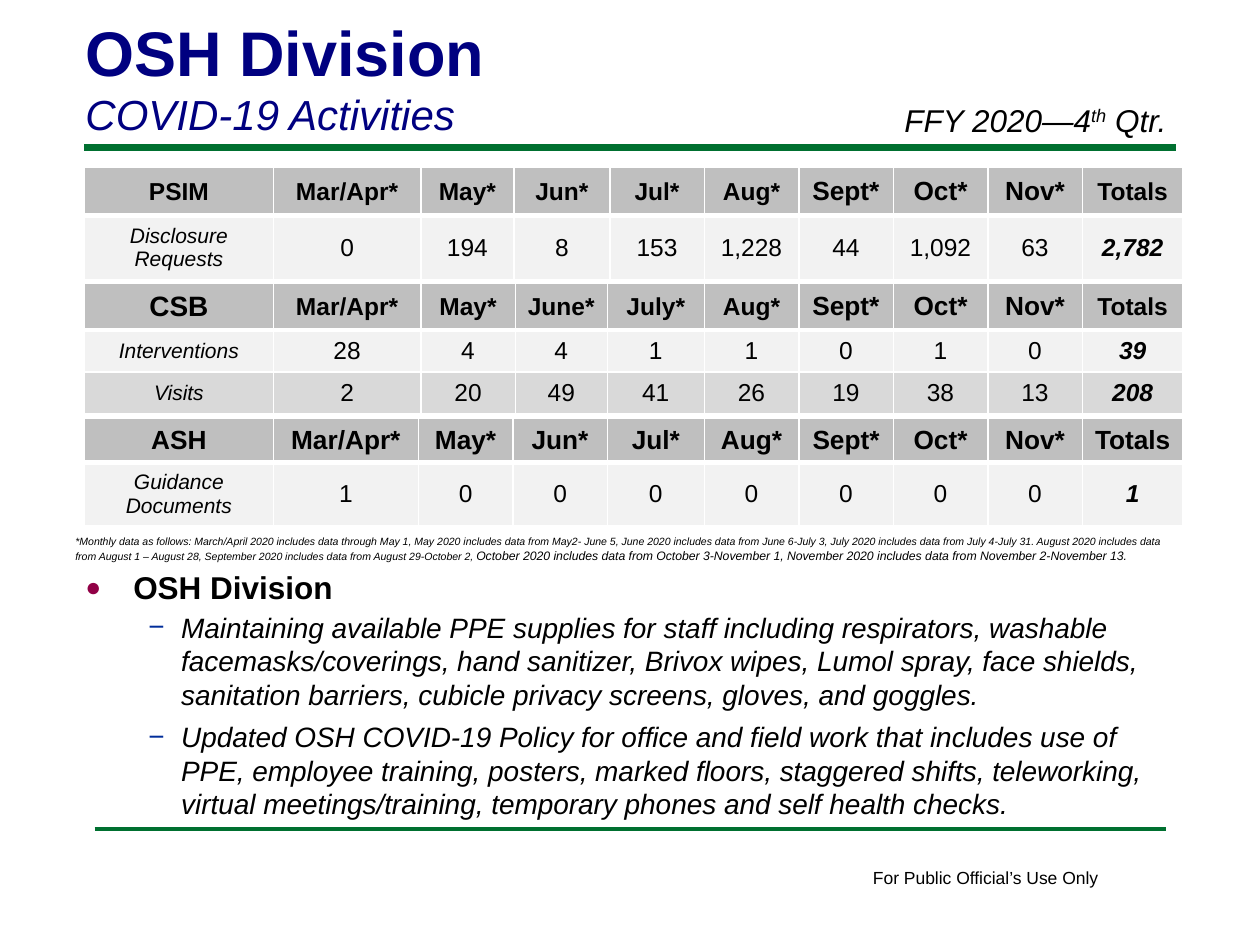
from lxml import etree
from pptx import Presentation
from pptx.dml.color import RGBColor
from pptx.enum.shapes import MSO_CONNECTOR
from pptx.enum.text import MSO_ANCHOR, PP_ALIGN
from pptx.oxml.ns import qn
from pptx.util import Inches, Pt

STRAIGHT = MSO_CONNECTOR.STRAIGHT
MIDDLE = MSO_ANCHOR.MIDDLE
CENTER = PP_ALIGN.CENTER

FONT = "Arial"
BLACK, WHITE, NAVY, GREEN = "000000", "FFFFFF", "000080", "007030"
HEADER_FILL, LIGHT_FILL, DARK_FILL = "BFBFBF", "F2F2F2", "D9D9D9"
TABLE_LEFT = 0.67
MIXED_SIZES = [14] * 5 + [15] * 3 + [14]

TABLES = [
    dict(
        top=1.33,
        widths=[1.5, 1.17, 0.74, 0.76] + [0.75] * 5 + [0.8],
        heights=[0.38, 0.51],
        header_sizes=[14] + MIXED_SIZES,
        rows=[
            ["PSIM", "Mar/Apr*", "May*", "Jun*", "Jul*", "Aug*", "Sept*", "Oct*", "Nov*", "Totals"],
            ["Disclosure Requests", "0", "194", "8", "153", "1,228", "44", "1,092", "63", "2,782"],
        ],
    ),
    dict(
        top=2.25,
        widths=[1.5, 1.17, 0.75, 0.73, 0.77] + [0.75] * 4 + [0.8],
        heights=[0.37, 0.33, 0.33],
        header_sizes=[16] + MIXED_SIZES,
        rows=[
            ["CSB", "Mar/Apr*", "May*", "June*", "July*", "Aug*", "Sept*", "Oct*", "Nov*", "Totals"],
            ["Interventions", "28", "4", "4", "1", "1", "0", "1", "0", "39"],
            ["Visits", "2", "20", "49", "41", "26", "19", "38", "13", "208"],
        ],
    ),
    dict(
        top=3.32,
        widths=[1.5, 1.15, 0.75, 0.75, 0.77] + [0.75] * 4 + [0.8],
        heights=[0.35, 0.5],
        header_sizes=[15] * 10,
        rows=[
            ["ASH", "Mar/Apr*", "May*", "Jun*", "Jul*", "Aug*", "Sept*", "Oct*", "Nov*", "Totals"],
            ["Guidance Documents", "1", "0", "0", "0", "0", "0", "0", "0", "1"],
        ],
    ),
]

ACTIVITIES = [
    "Maintaining available PPE supplies for staff including respirators, washable "
    "facemasks/coverings, hand sanitizer, Brivox wipes, Lumol spray, face shields, "
    "sanitation barriers, cubicle privacy screens, gloves, and goggles.",
    "Updated OSH COVID-19 Policy for office and field work that includes use of PPE, "
    "employee training, posters, marked floors, staggered shifts, teleworking, virtual "
    "meetings/training, temporary phones and self health checks.",
]

MONTH_NOTE = (
    "*Monthly data as follows: March/April 2020 includes data through May 1, May 2020 "
    "includes data from May2- June 5, June 2020 includes data from June 6-July 3, July 2020 "
    "includes data from July 4-July 31. August 2020 includes data from August 1 – August 28, "
    "September 2020 includes data from August 29-October 2, "
)
LATE_MONTH_NOTE = (
    "October 2020 includes data from October 3-November 1, "
    "November 2020 includes data from November 2-November 13."
)


def rgb(color):
    return RGBColor.from_string(color)


def add_text(paragraph, text, size=14, color=BLACK, bold=False, italic=False, baseline=0):
    run = paragraph.add_run()
    run.text = text
    font = run.font
    font.name, font.size, font.bold, font.italic = FONT, Pt(size), bold, italic
    font.color.rgb = rgb(color)
    if baseline:
        run._r.get_or_add_rPr().set("baseline", str(baseline * 1000))


def add_rule(slide, left, right, y, weight):
    rule = slide.shapes.add_connector(
        STRAIGHT, Inches(left), Inches(y), Inches(right), Inches(y))
    rule.line.color.rgb = rgb(GREEN)
    rule.line.width = Pt(weight)
    etree.SubElement(rule._element.spPr, qn("a:effectLst"))


def add_frame(slide, left, top, width, height, wrap=True):
    box = slide.shapes.add_textbox(Inches(left), Inches(top), Inches(width), Inches(height))
    box.text_frame.word_wrap = wrap
    return box.text_frame


def set_borders(cell, bottom):
    properties = cell._tc.get_or_add_tcPr()
    for side, weight in (("L", 1), ("R", 1), ("T", 1), ("B", bottom)):
        line = etree.SubElement(properties, qn(f"a:ln{side}"), w=str(Pt(weight)))
        fill = etree.SubElement(line, qn("a:solidFill"))
        etree.SubElement(fill, qn("a:srgbClr"), val=WHITE)


def cell_format(row, column, last, header_sizes):
    if row == 0:
        return dict(size=header_sizes[column], bold=True)
    if column == 0:
        return dict(size=12, italic=True)
    return dict(size=14, bold=column == last, italic=column == last)


def add_monthly_table(slide, top, widths, heights, header_sizes, rows):
    table = slide.shapes.add_table(
        len(rows), len(widths), Inches(TABLE_LEFT), Inches(top),
        Inches(sum(widths)), Inches(sum(heights))).table
    table.horz_banding = False
    for column, width in zip(table.columns, widths):
        column.width = Inches(width)
    for r, (values, height) in enumerate(zip(rows, heights)):
        table.rows[r].height = Inches(height)
        for c, value in enumerate(values):
            cell = table.cell(r, c)
            cell.margin_left = cell.margin_right = Inches(0.05)
            cell.vertical_anchor = MIDDLE
            set_borders(cell, 3 if r == 0 else 1)
            cell.fill.solid()
            cell.fill.fore_color.rgb = rgb((HEADER_FILL, LIGHT_FILL, DARK_FILL)[r])
            paragraph = cell.text_frame.paragraphs[0]
            paragraph.alignment = CENTER
            add_text(paragraph, value, **cell_format(r, c, len(widths) - 1, header_sizes))


def set_bullet(paragraph, symbol, color, left, hanging, scale=100):
    properties = paragraph._p.get_or_add_pPr()
    properties.set("marL", str(Inches(left)))
    properties.set("indent", str(-Inches(hanging)))
    bullet_color = etree.SubElement(properties, qn("a:buClr"))
    etree.SubElement(bullet_color, qn("a:srgbClr"), val=color)
    etree.SubElement(properties, qn("a:buSzPct"), val=str(scale * 1000))
    etree.SubElement(properties, qn("a:buFont"), typeface=FONT)
    etree.SubElement(properties, qn("a:buChar"), char=symbol)


def add_activities(slide):
    frame = add_frame(slide, 0.58, 4.46, 8.87, 2.37)
    heading = frame.paragraphs[0]
    set_bullet(heading, "●", "910046", 0.38, 0.38, scale=84)
    add_text(heading, "OSH Division", size=18, bold=True)
    for activity, gap in zip(ACTIVITIES, (2.5, 5)):
        item = frame.add_paragraph()
        item.level = 1
        item.space_before = Pt(gap)
        set_bullet(item, "−", "012D9A", 0.76, 0.26)
        add_text(item, activity, size=16, italic=True)


def add_title(slide):
    frame = add_frame(slide, 0.58, 0.05, 8.25, 1.11)
    frame.vertical_anchor = MIDDLE
    add_text(frame.paragraphs[0], "OSH Division", size=36, color=NAVY, bold=True)
    add_text(frame.add_paragraph(), "COVID-19 Activities", size=24, color=NAVY, italic=True)


def main():
    deck = Presentation()
    deck.slide_width, deck.slide_height = Inches(10), Inches(7.5)
    slide = deck.slides.add_slide(deck.slide_layouts[6])

    add_rule(slide, 0.67, 9.33, 1.17, 4)
    add_rule(slide, 0.75, 9.25, 6.58, 2)
    footer = add_frame(slide, 6.83, 6.83, 2.01, 0.27, wrap=False).paragraphs[0]
    add_text(footer, "For Public Official’s Use Only", size=10)

    add_title(slide)
    for table in TABLES:
        add_monthly_table(slide, **table)
    add_activities(slide)

    note = add_frame(slide, 0.5, 4.2, 8.96, 0.32).paragraphs[0]
    add_text(note, MONTH_NOTE, size=6, italic=True)
    add_text(note, LATE_MONTH_NOTE, size=7, italic=True)

    quarter = add_frame(slide, 7.08, 0.75, 2.5, 0.4).paragraphs[0]
    for text, baseline in (("FFY 2020—4", 0), ("th", 30), (" Qtr.", 0)):
        add_text(quarter, text, size=18, italic=True, baseline=baseline)

    deck.save("out.pptx")


if __name__ == "__main__":
    main()
